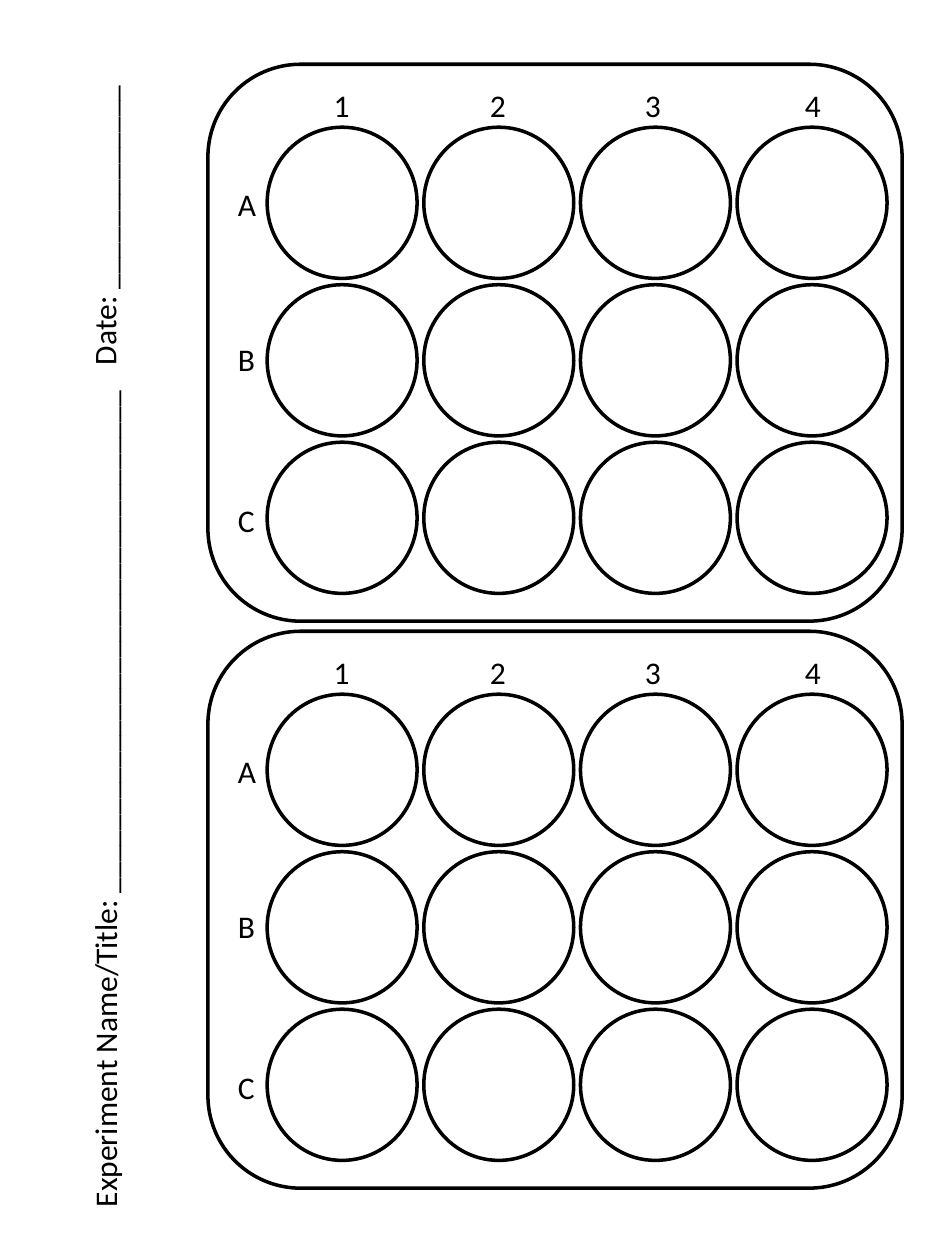
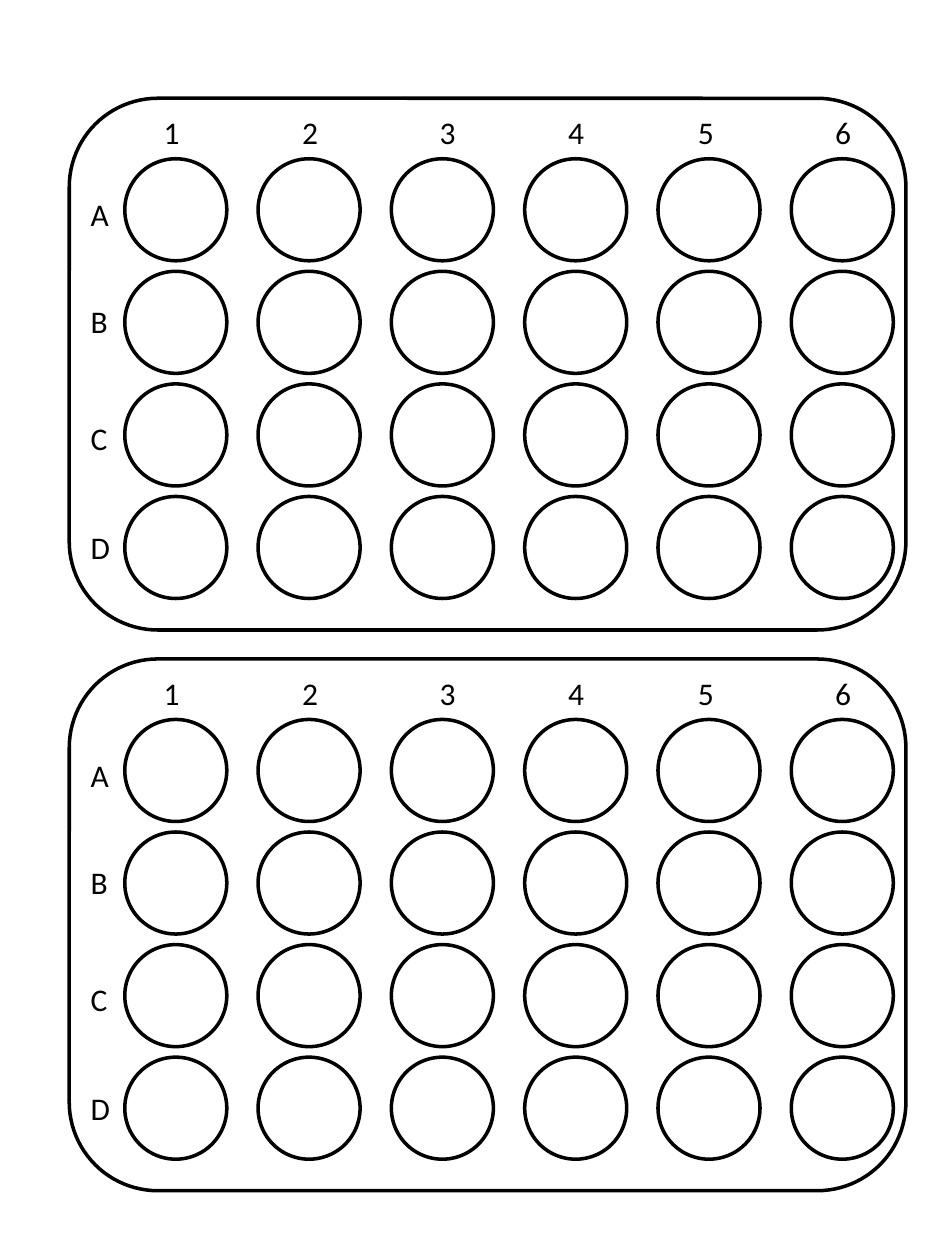
from dataclasses import dataclass

from pptx import Presentation
from pptx.dml.color import RGBColor
from pptx.enum.shapes import MSO_SHAPE as Preset
from pptx.enum.text import MSO_AUTO_SIZE as AutoSize
from pptx.shapes.autoshape import Shape
from pptx.shapes.shapetree import GroupShapes, SlideShapes
from pptx.slide import Slide
from pptx.util import Inches, Pt

BLACK = "000000"
WHITE = "FFFFFF"
LINE_WIDTH = Pt(2)
FONT_FORMAT = {"name": "Calibri", "size": Pt(18)}
FRAME_FORMAT = {"word_wrap": False, "auto_size": AutoSize.SHAPE_TO_FIT_TEXT}
BLANK_LAYOUT = 6


@dataclass(frozen=True)
class Box:
    left: float
    top: float
    width: float
    height: float


@dataclass(frozen=True)
class PlateDesign:
    """A well plate; every vertical place is measured from the plate's top."""

    left: float
    width: float
    height: float
    first_well: Box
    last_well_left: float
    last_well_top: float
    column_label_lefts: tuple[float, ...]
    column_label_top: float
    row_label_left: float
    row_label_tops: tuple[float, ...]
    label_width: float
    label_height: float
    fill: str | None = None


@dataclass(frozen=True)
class SideLabel:
    text: str
    box: Box


TWELVE_WELL = PlateDesign(
    left=1.65, width=5.51, height=4.42,
    first_well=Box(2.12, 0.5, 1.19, 1.2),
    last_well_left=5.85, last_well_top=3,
    column_label_lefts=(2.55, 3.79, 5.02, 6.29), column_label_top=0.12,
    row_label_left=1.79, row_label_tops=(0.91, 2.14, 3.42),
    label_width=0.3, label_height=0.36,
)
TWENTY_FOUR_WELL = PlateDesign(
    left=0.55, width=6.64, height=4.22,
    first_well=Box(0.99, 0.48, 0.81, 0.81),
    last_well_left=6.28, last_well_top=3.16,
    column_label_lefts=(1.2, 2.3, 3.39, 4.41, 5.44, 6.53), column_label_top=0.07,
    row_label_left=0.62, row_label_tops=(0.72, 1.57, 2.5, 3.36),
    label_width=0.32, label_height=0.37, fill=WHITE,
)
SIDE_LABELS = (
    SideLabel("Experiment Name/Title: " + "_" * 32, Box(-2.55, 6.1, 6.76, 0.4)),
    SideLabel("Date: " + "_" * 13, Box(-0.4, 1.57, 2.45, 0.4)),
)
SLIDE_PLATES = (
    (TWELVE_WELL, (0.51, 5.01)),
    (TWENTY_FOUR_WELL, (0.78, 5.23)),
)


def color(value: str) -> RGBColor:
    return RGBColor.from_string(value)


def place(box: Box) -> list[Inches]:
    return [Inches(length) for length in (box.left, box.top, box.width, box.height)]


def evenly_spaced(first: float, last: float, count: int) -> list[float]:
    return [first + (last - first) * index / (count - 1) for index in range(count)]


def add_outline(shapes: GroupShapes, preset: Preset, box: Box, fill: str | None) -> None:
    shape = shapes.add_shape(preset, *place(box))
    shape.shadow.inherit = False
    shape.line.color.rgb = color(BLACK)
    shape.line.width = LINE_WIDTH
    if fill is None:
        shape.fill.background()
    else:
        shape.fill.solid()
        shape.fill.fore_color.rgb = color(fill)


def add_label(shapes: GroupShapes | SlideShapes, text: str, box: Box) -> Shape:
    label = shapes.add_textbox(*place(box))
    for name, value in FRAME_FORMAT.items():
        setattr(label.text_frame, name, value)
    run = label.text_frame.paragraphs[0].add_run()
    run.text = text
    for name, value in FONT_FORMAT.items():
        setattr(run.font, name, value)
    run.font.color.rgb = color(BLACK)
    return label


def add_plate(slide: Slide, design: PlateDesign, top: float) -> None:
    shapes = slide.shapes.add_group_shape().shapes
    plate = Box(design.left, top, design.width, design.height)
    add_outline(shapes, Preset.ROUNDED_RECTANGLE, plate, design.fill)

    # Wells
    well = design.first_well
    columns = len(design.column_label_lefts)
    rows = len(design.row_label_tops)
    for well_top in evenly_spaced(well.top, design.last_well_top, rows):
        for well_left in evenly_spaced(well.left, design.last_well_left, columns):
            box = Box(well_left, top + well_top, well.width, well.height)
            add_outline(shapes, Preset.OVAL, box, design.fill)

    # Column numbers and row letters
    label_size = (design.label_width, design.label_height)
    for number, left in enumerate(design.column_label_lefts, start=1):
        add_label(shapes, str(number), Box(left, top + design.column_label_top, *label_size))
    for letter, label_top in zip("ABCD", design.row_label_tops):
        add_label(shapes, letter, Box(design.row_label_left, top + label_top, *label_size))


def main() -> None:
    presentation = Presentation()
    presentation.slide_width = Inches(7.5)
    presentation.slide_height = Inches(10)

    # One plate format per slide
    for design, tops in SLIDE_PLATES:
        slide = presentation.slides.add_slide(presentation.slide_layouts[BLANK_LAYOUT])
        for top in tops:
            add_plate(slide, design, top)

    # Fill-in lines up the left side of the first slide
    for side_label in SIDE_LABELS:
        label = add_label(presentation.slides[0].shapes, side_label.text, side_label.box)
        label.rotation = 270

    presentation.save("out.pptx")


if __name__ == "__main__":
    main()
